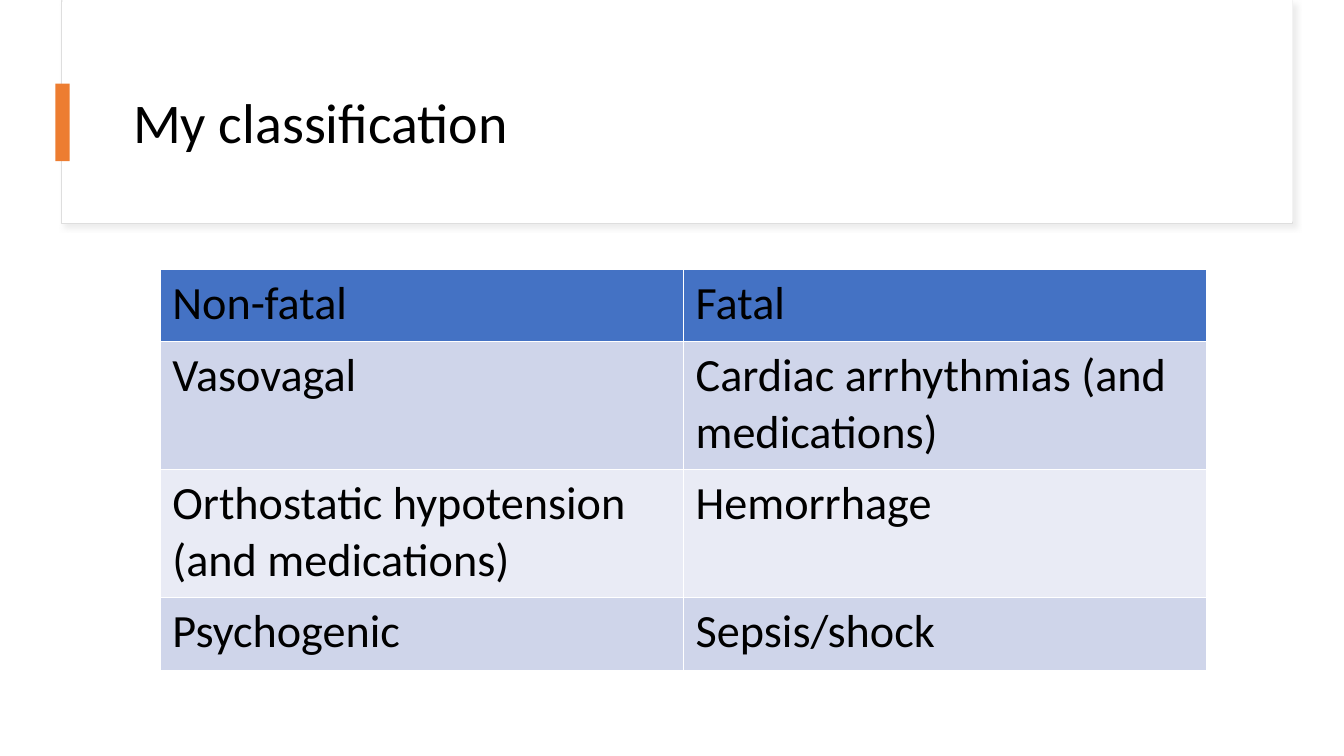
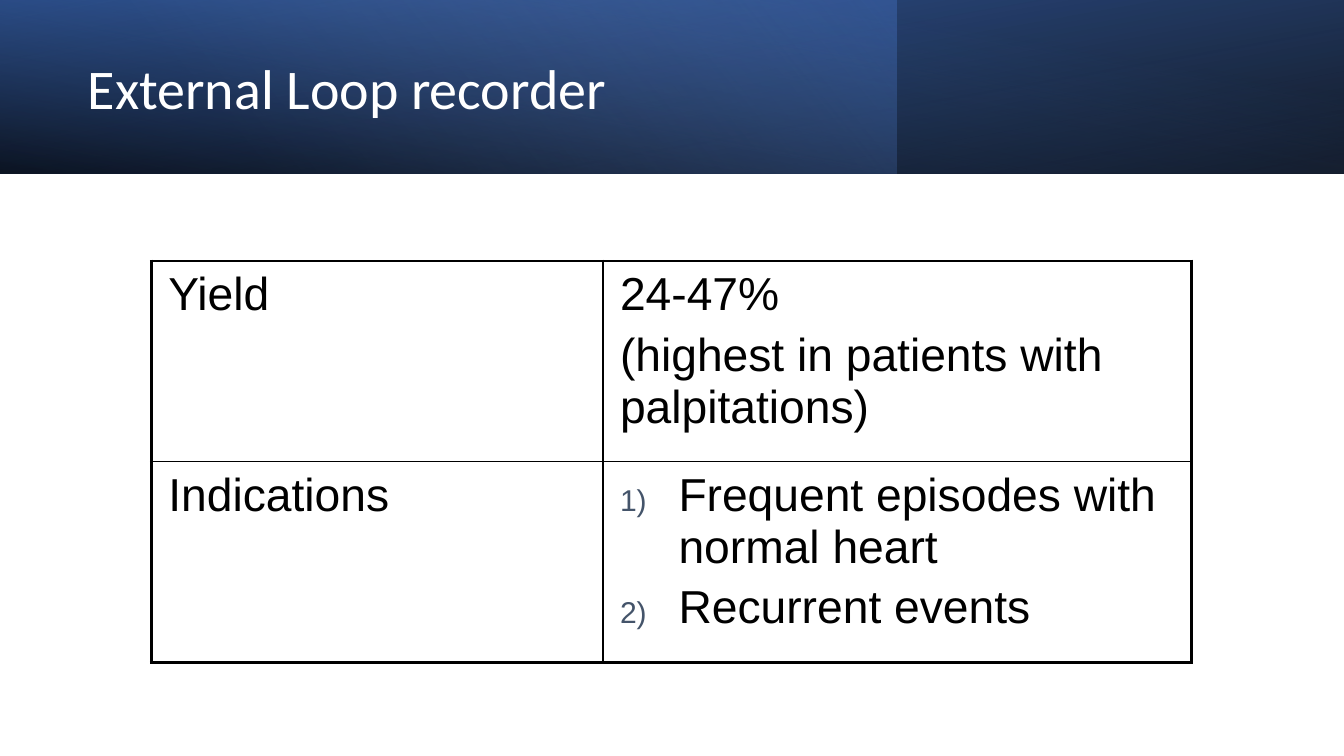
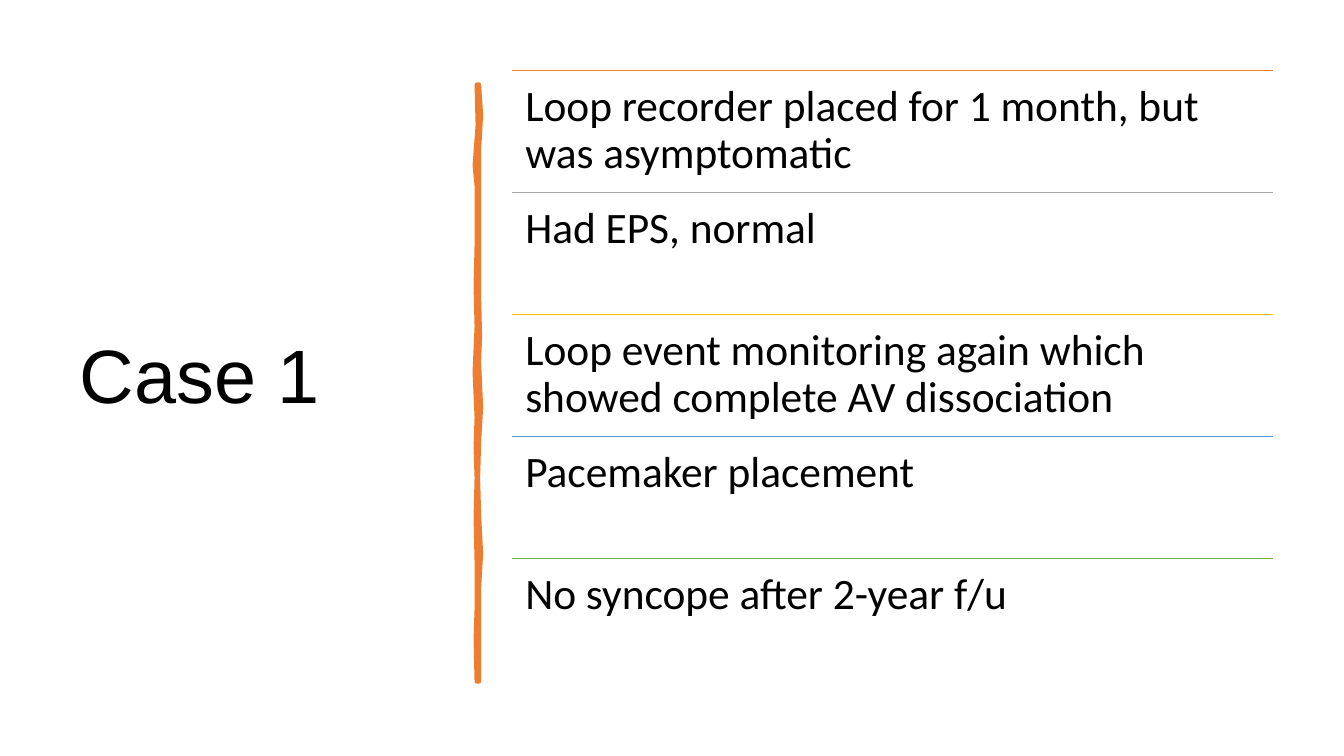
from lxml import etree
from pptx import Presentation
from pptx.dml.color import RGBColor
from pptx.enum.shapes import MSO_CONNECTOR, MSO_SHAPE
from pptx.enum.text import MSO_ANCHOR, MSO_AUTO_SIZE, PP_ALIGN
from pptx.oxml.ns import qn
from pptx.util import Inches, Pt

RECTANGLE = MSO_SHAPE.RECTANGLE
STRAIGHT = MSO_CONNECTOR.STRAIGHT
MIDDLE = MSO_ANCHOR.MIDDLE
LEFT = PP_ALIGN.LEFT
NO_FIT = MSO_AUTO_SIZE.NONE

BLACK = RGBColor(0x00, 0x00, 0x00)
WHITE = RGBColor(0xFF, 0xFF, 0xFF)
FRAME_GRAY = RGBColor(0xDE, 0xDE, 0xDE)
SHADOW_GRAY = RGBColor(0xD9, 0xD9, 0xD9)
ORANGE = RGBColor(0xED, 0x7D, 0x31)
GRAY = RGBColor(0xA5, 0xA5, 0xA5)
GOLD = RGBColor(0xFF, 0xC0, 0x00)
SKY = RGBColor(0x5B, 0x9B, 0xD5)
GREEN = RGBColor(0x70, 0xAD, 0x47)
BLUE = RGBColor(0x44, 0x72, 0xC4)
DEEP_BLUE = RGBColor(0x2F, 0x55, 0x97)
PALE_BLUE = RGBColor(0x8F, 0xAA, 0xDC)
BAND_DARK = RGBColor(0xCF, 0xD5, 0xEA)
BAND_LIGHT = RGBColor(0xE9, 0xEB, 0xF5)
SLATE = RGBColor(0x44, 0x54, 0x6A)

BODY_FONT = "Calibri"
PLAIN_FONT = "Arial"
TITLE_ONLY = 5
CELL_SIZE = 33


def add_element(parent, tag, **attributes):
    element = etree.SubElement(parent, qn(tag))
    for name, value in attributes.items():
        element.set(name, str(value))
    return element


def format_paragraph(paragraph, font, size, color):
    paragraph.alignment = LEFT
    for run in paragraph.runs:
        run.font.name = font
        run.font.size = Pt(size)
        run.font.bold = False
        run.font.color.rgb = color


def add_title(slide, box, text, size=40, color=BLACK, font=BODY_FONT):
    title = slide.shapes.title
    title.left, title.top, title.width, title.height = map(Inches, box)
    slide.shapes._spTree.append(title._element)
    frame = title.text_frame
    frame.text = text
    frame.word_wrap = True
    frame.auto_size = NO_FIT
    frame.vertical_anchor = MIDDLE
    frame.paragraphs[0].line_spacing = 0.9
    format_paragraph(frame.paragraphs[0], font, size, color)


def add_rectangle(slide, box, fill=None, line=None):
    rectangle = slide.shapes.add_shape(RECTANGLE, *map(Inches, box))
    rectangle.shadow.inherit = False
    if fill is not None:
        rectangle.fill.solid()
        rectangle.fill.fore_color.rgb = fill
    if line is None:
        rectangle.line.fill.background()
    else:
        rectangle.line.color.rgb = line
        rectangle.line.width = Pt(0.75)
    return rectangle


def add_title_frame(slide, box):
    left, top, width, height = box
    frame = add_rectangle(slide, (left, top + 0.01, width, height), WHITE, FRAME_GRAY)
    effects = frame._element.spPr.find(qn("a:effectLst"))
    shadow = add_element(effects, "a:outerShdw", blurRad=Pt(4), dist=Pt(3),
                         dir=45 * 60000, algn="tl", rotWithShape=0)
    color = add_element(shadow, "a:srgbClr", val=SHADOW_GRAY)
    add_element(color, "a:alpha", val=50000)
    add_rectangle(slide, (left + 0.01, top, width - 0.01, height - 0.01), WHITE)
    add_title(slide, (left + 0.61, top + 0.6, width - 1.09, 1.29), "My classification")
    add_rectangle(slide, (left - 0.06, top + 0.83, 0.14, 0.77), ORANGE)


def add_gradient(slide, box, stops, angle, rotation=0, flipped=False):
    panel = add_rectangle(slide, box)
    panel.rotation = rotation
    if flipped:
        panel._element.spPr.find(qn("a:xfrm")).set("flipH", "1")
    panel.fill.gradient()
    panel.fill.gradient_angle = 360 - angle
    for stop, (position, color, _) in zip(panel.fill.gradient_stops, stops):
        stop.position = position
        stop.color.rgb = color
    gradient = panel._element.spPr.find(qn("a:gradFill"))
    for color, (_, _, opacity) in zip(gradient.iter(qn("a:srgbClr")), stops):
        add_element(color, "a:alpha", val=opacity * 1000)


def add_title_band(slide, box):
    left, top, width, height = box
    add_gradient(slide, box, [(0, BLACK, 96), (1, DEEP_BLUE, 100)], 100, 180, True)
    add_gradient(slide, (left, top, 8.89, height),
                 [(0, BLUE, 41), (0.74, PALE_BLUE, 0)], 140)
    add_gradient(slide, box, [(0, BLACK, 63), (0.78, BLUE, 15)], 260, flipped=True)
    add_title(slide, (left + 0.77, top + 0.27, 7.72, 1.27),
              "External Loop recorder", color=WHITE)


def set_borders(cell, color, weights):
    properties = cell._tc.get_or_add_tcPr()
    for index, (side, weight) in enumerate(zip("LRTB", weights)):
        line = etree.Element(qn("a:ln" + side), w=str(Pt(weight)))
        fill = add_element(line, "a:solidFill")
        add_element(fill, "a:srgbClr", val=color)
        properties.insert(index, line)


def add_grid(slide, box, widths, heights, rows, fills, font, insets, border, outer):
    grid = slide.shapes.add_table(len(rows), len(widths), *map(Inches, box)).table
    grid.first_row = False
    grid.horz_banding = False
    for column, width in zip(grid.columns, widths):
        column.width = Inches(width)
    for row, height in zip(grid.rows, heights):
        row.height = Inches(height)
    last_row, last_column = len(rows) - 1, len(widths) - 1
    for r, row in enumerate(rows):
        for c, text in enumerate(row):
            cell = grid.cell(r, c)
            cell.margin_left = cell.margin_right = Inches(insets[0])
            cell.margin_top = cell.margin_bottom = Inches(insets[1])
            if fills[r] is None:
                cell.fill.background()
            else:
                cell.fill.solid()
                cell.fill.fore_color.rgb = fills[r]
            edges = (c == 0, c == last_column, r == 0, r == last_row)
            set_borders(cell, border, [outer if edge else 1 for edge in edges])
            cell.text_frame.text = text
            for p, paragraph in enumerate(cell.text_frame.paragraphs):
                if p:
                    paragraph.space_before = Pt(0.2 * CELL_SIZE)
                format_paragraph(paragraph, font, CELL_SIZE, BLACK)
    return grid


def number_paragraphs(cell):
    for paragraph in cell.text_frame.paragraphs:
        properties = paragraph._p.get_or_add_pPr()
        properties.set("marL", str(Inches(0.58)))
        properties.set("indent", str(Inches(-0.58)))
        color = add_element(properties, "a:buClr")
        add_element(color, "a:srgbClr", val=SLATE)
        add_element(properties, "a:buSzPct", val=65000)
        add_element(properties, "a:buFont", typeface=PLAIN_FONT)
        add_element(properties, "a:buAutoNum", type="arabicParenR")


def add_brush_line(slide, left, top):
    right_edge = [(0.04, 0), (0.06, 0.3), (0.04, 0.65), (0.04, 1.42), (0.04, 2.1),
                  (0.05, 2.5), (0.04, 2.75), (0.06, 3.2), (0.04, 3.55),
                  (0.03, 3.9), (0.04, 4.26), (0.06, 4.65), (0.04, 5), (0.04, 5.92)]
    left_edge = [(0.02, 5.92), (0.01, 5.5), (0.02, 5.2), (0.02, 4.73), (0.01, 4.3),
                 (0.02, 3.9), (0.01, 3.6), (0.02, 3.3), (0, 2.85), (0.02, 2.4),
                 (0.01, 2), (0.02, 1.6), (0.02, 1), (0, 0.8), (0.03, 0.4), (0.02, 0)]
    points = [(Inches(left + x), Inches(top + y)) for x, y in right_edge + left_edge]
    builder = slide.shapes.build_freeform(*points[0])
    builder.add_line_segments(points[1:], close=True)
    brush = builder.convert_to_shape()
    brush.shadow.inherit = False
    brush.fill.solid()
    brush.fill.fore_color.rgb = ORANGE
    brush.line.color.rgb = ORANGE
    brush.line.width = Pt(3.25)
    add_element(brush.line._get_or_add_ln(), "a:round")


def add_ruled_list(slide, box, entries):
    left, top, width, height = box
    step = height / len(entries)
    for index, (color, text) in enumerate(entries):
        y = top + index * step
        rule = slide.shapes.add_connector(
            STRAIGHT, *map(Inches, (left, y, left + width, y)))
        rule.line.color.rgb = color
        rule.line.width = Pt(1)
        add_element(rule._element.spPr, "a:effectLst")
        entry = slide.shapes.add_textbox(*map(Inches, (left, y, width, step)))
        frame = entry.text_frame
        frame.word_wrap = True
        frame.margin_left = frame.margin_right = Inches(0.13)
        frame.margin_top = frame.margin_bottom = Inches(0.13)
        frame.text = text
        frame.paragraphs[0].line_spacing = 0.9
        format_paragraph(frame.paragraphs[0], BODY_FONT, 31, BLACK)


def build_classification(slide):
    add_title_frame(slide, (0.61, 0, 12.21, 2.21))
    rows = [
        ("Non-fatal", "Fatal"),
        ("Vasovagal", "Cardiac arrhythmias (and medications)"),
        ("Orthostatic hypotension (and medications)", "Hemorrhage"),
        ("Psychogenic", "Sepsis/shock"),
    ]
    add_grid(slide, (1.59, 2.67, 10.38, 3.98), (5.19, 5.19), (0.72, 1.27, 1.27, 0.72),
             rows, (BLUE, BAND_DARK, BAND_LIGHT, BAND_DARK), BODY_FONT,
             (0.12, 0.06), WHITE, 1)


def build_loop_recorder(slide):
    add_title_band(slide, (0, 0, 13.33, 1.72))
    rows = [
        ("Yield", "24-47%\n(highest in patients with palpitations)"),
        ("Indications", "Frequent episodes with normal heart\nRecurrent events"),
    ]
    grid = add_grid(slide, (1.5, 2.59, 10.32, 3.98), (4.48, 5.84), (1.99, 1.99),
                    rows, (None, None), PLAIN_FONT, (0.17, 0.08), BLACK, 2.25)
    number_paragraphs(grid.cell(1, 1))


def build_case(slide):
    add_title(slide, (0.69, 0.7, 3.74, 6.11), "Case 1", 54, font=PLAIN_FONT)
    add_brush_line(slide, 4.71, 0.84)
    add_ruled_list(slide, (5.08, 0.7, 7.55, 6.05), [
        (ORANGE, "Loop recorder placed for 1 month, but was asymptomatic"),
        (GRAY, "Had EPS, normal"),
        (GOLD, "Loop event monitoring again which showed complete AV dissociation"),
        (SKY, "Pacemaker placement"),
        (GREEN, "No syncope after 2-year f/u"),
    ])


def main():
    deck = Presentation()
    deck.slide_width = Inches(13.33)
    deck.slide_height = Inches(7.5)
    for build in (build_classification, build_loop_recorder, build_case):
        build(deck.slides.add_slide(deck.slide_layouts[TITLE_ONLY]))
    deck.save("out.pptx")


if __name__ == "__main__":
    main()
